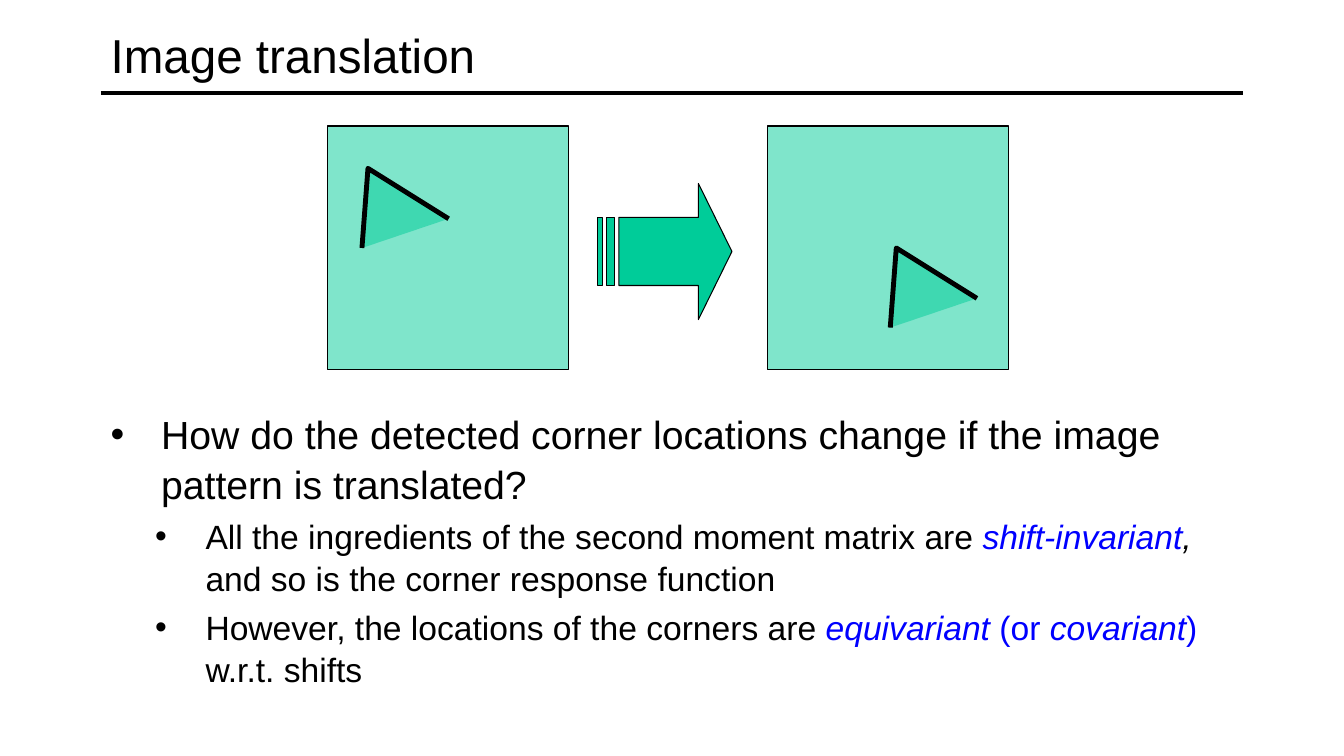
"""Build a slide on how corner locations behave under image translation."""
from dataclasses import dataclass

from lxml import etree
from pptx import Presentation
from pptx.dml import color
from pptx.enum import shapes, text
from pptx.oxml import ns
from pptx.util import Inches, Pt

COLORS = {"black": "000000", "blue": "0000FF", "green": "00CC99"}
FONT = "Arial"
MARGIN, CONTENT_W = 1, 11.33
PANEL_TOP, PANEL_W, PANEL_H = 1.25, 2.39, 2.42
CORNER = [(0, 0.79), (0.06, 0), (0.86, 0.5)]


@dataclass(frozen=True)
class Run:
    text: str
    color: str = "black"
    italic: bool = False


@dataclass(frozen=True)
class Bullet:
    runs: tuple[Run, ...]
    size: int
    indent: float
    level: int = 0


@dataclass(frozen=True)
class Panel:
    left: float
    corner_left: float
    corner_top: float


PANELS = [Panel(3.25, 3.59, 1.67), Panel(7.61, 8.83, 2.46)]
BULLETS = [
    Bullet((Run("How do the detected corner locations change if the image "
                "pattern is translated?"),), 28, 0.5),
    Bullet((Run("All the ingredients of the second moment matrix are "),
            Run("shift-invariant", "blue", True),
            Run(", ", "black", True),
            Run("and so is the corner response function")), 24, 0.94, 1),
    Bullet((Run("However, the locations of the corners are "),
            Run("equivariant", "blue", True),
            Run(" (or ", "blue"),
            Run("covariant", "blue", True),
            Run(") ", "blue"),
            Run("w.r.t. shifts")), 24, 0.94, 1),
]


def rgb(name: str) -> color.RGBColor:
    return color.RGBColor.from_string(COLORS[name])


def style(sp, line_width: float, alpha: int = 100) -> None:
    sp.shadow.inherit = False
    sp.fill.solid()
    sp.fill.fore_color.rgb = rgb("green")
    sp.line.color.rgb = rgb("black")
    sp.line.width = Pt(line_width)
    if alpha < 100:
        clr = sp.fill._xPr.find(ns.qn("a:solidFill"))[0]
        etree.SubElement(clr, ns.qn("a:alpha"), val=str(alpha * 1000))


def add_run(p, run: Run, size: int) -> None:
    r = p.add_run()
    r.text = run.text
    r.font.name = FONT
    r.font.size = Pt(size)
    r.font.italic = run.italic
    r.font.color.rgb = rgb(run.color)


def add_text_frame(s, top: float, height: float, anchor):
    tf = s.shapes.add_textbox(Inches(MARGIN), Inches(top),
                              Inches(CONTENT_W), Inches(height)).text_frame
    tf.word_wrap = True
    tf.vertical_anchor = anchor
    return tf


def add_title(s) -> None:
    rule = s.shapes.add_connector(shapes.MSO_CONNECTOR.STRAIGHT, Inches(MARGIN), Inches(0.92),
                                  Inches(MARGIN + CONTENT_W), Inches(0.92))
    rule.line.color.rgb = rgb("black")
    rule.line.width = Pt(3)
    etree.SubElement(rule._element.spPr, ns.qn("a:effectLst"))
    tf = add_text_frame(s, 0.08, 0.92, text.MSO_ANCHOR.MIDDLE)
    add_run(tf.paragraphs[0], Run("Image translation"), 34)


def add_bullets(s, bullets: list[Bullet]) -> None:
    tf = add_text_frame(s, 4, 2.83, text.MSO_ANCHOR.TOP)
    for i, bullet in enumerate(bullets):
        p = tf.add_paragraph() if i else tf.paragraphs[0]
        p.level = bullet.level
        p.line_spacing = 1.05
        p.space_before = Pt(bullet.size * 0.2 if i else 0)
        pPr = p._p.get_or_add_pPr()
        pPr.set("marL", str(Inches(bullet.indent)))
        pPr.set("indent", str(Inches(-0.5)))
        etree.SubElement(pPr, ns.qn("a:buFont"), typeface=FONT)
        etree.SubElement(pPr, ns.qn("a:buChar"), char="•")
        for run in bullet.runs:
            add_run(p, run, bullet.size)


def add_panel(s, panel: Panel) -> None:
    square = s.shapes.add_shape(shapes.MSO_SHAPE.RECTANGLE, Inches(panel.left),
                                Inches(PANEL_TOP), Inches(PANEL_W), Inches(PANEL_H))
    style(square, 0.75, 50)
    points = [(Inches(panel.corner_left + x), Inches(panel.corner_top + y)) for x, y in CORNER]
    fb = s.shapes.build_freeform(*points[0])
    fb.add_line_segments(points[1:], close=False)
    style(fb.convert_to_shape(), 3.5, 50)


def add_arrow(s) -> None:
    sp = s.shapes.add_shape(shapes.MSO_SHAPE.STRIPED_RIGHT_ARROW, Inches(5.93), Inches(1.82),
                            Inches(1.33), Inches(1.35))
    sp.adjustments[0] = 0.5
    sp.adjustments[1] = 0.25
    style(sp, 0.75)


def main() -> None:
    prs = Presentation()
    prs.slide_width, prs.slide_height = Inches(13.33), Inches(7.5)
    s = prs.slides.add_slide(prs.slide_layouts[6])
    add_title(s)
    add_bullets(s, BULLETS)
    for panel in PANELS:
        add_panel(s, panel)
    add_arrow(s)
    prs.save("out.pptx")


if __name__ == "__main__":
    main()
